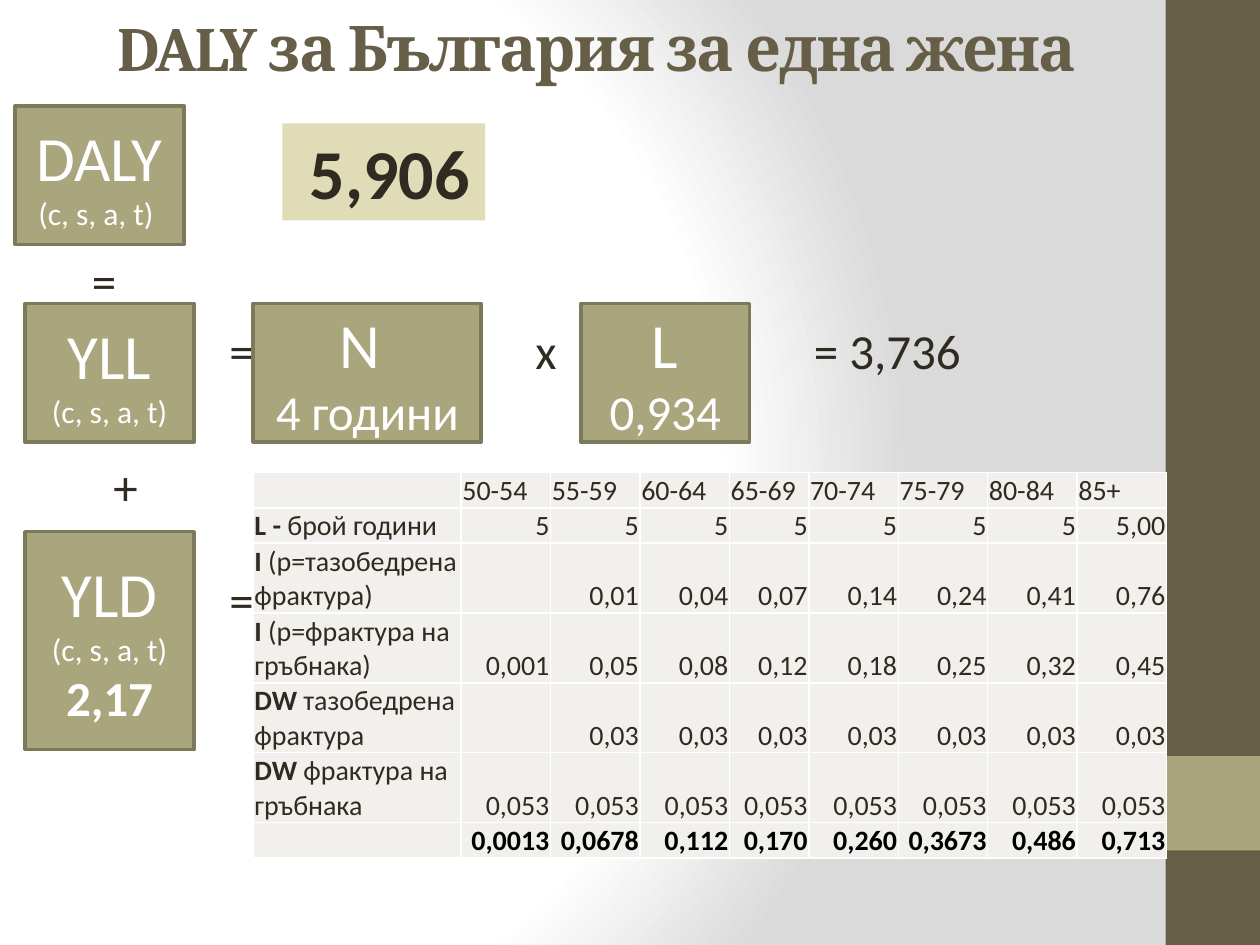
from lxml import etree
from pptx import Presentation
from pptx.dml.color import RGBColor
from pptx.enum.shapes import MSO_SHAPE
from pptx.enum.text import MSO_ANCHOR, PP_ALIGN
from pptx.oxml import parse_xml
from pptx.oxml.ns import nsdecls, qn
from pptx.util import Inches, Pt


class Theme:
    brown = RGBColor.from_string("675E47")
    olive = RGBColor.from_string("A9A57C")
    olive_edge = RGBColor.from_string("7D7A5C")
    sand = RGBColor.from_string("DFDCB7")
    cell = RGBColor.from_string("F1F0EC")
    ink = RGBColor.from_string("2F2B20")
    black = RGBColor.from_string("000000")
    white = RGBColor.from_string("FFFFFF")
    heading_font, body_font = "Cambria", "Calibri"
    huge, large, medium, small, tiny = 40, 36, 28, 18, 16


presentation = Presentation()
presentation.slide_width, presentation.slide_height = Inches(10), Inches(7.5)
COLUMN = presentation.slide_width / 100
ROW = presentation.slide_height / 75


def place(left, top, width, height):
    """Turn columns and rows of a 100 by 75 grid into slide lengths."""
    return [int(length) for length in
            (left * COLUMN, top * ROW, width * COLUMN, height * ROW)]


def write(paragraph, text, size, color=Theme.ink, font=Theme.body_font,
          bold=False, align=PP_ALIGN.LEFT):
    paragraph.alignment = align
    if not text:
        paragraph._p.get_or_add_endParaRPr().set("sz", str(size * 100))
        return None
    run = paragraph.add_run()
    run.text = text
    run.font.size, run.font.name, run.font.bold = Pt(size), font, bold
    run.font.color.rgb = color
    return run


slide = presentation.slides.add_slide(presentation.slide_layouts[5])

# Background: a radial fade from white to grey
slide.background.fill.solid()
properties = slide.element.cSld.find(qn("p:bg")).find(qn("p:bgPr"))
properties.replace(properties[0], parse_xml(
    f'<a:gradFill {nsdecls("a")} rotWithShape="1"><a:gsLst>'
    '<a:gs pos="0"><a:srgbClr val="FFFFFF"/></a:gs>'
    '<a:gs pos="75000"><a:srgbClr val="FFFFFF"/></a:gs>'
    '<a:gs pos="100000"><a:srgbClr val="DADADA"/></a:gs></a:gsLst>'
    '<a:path path="circle">'
    '<a:fillToRect l="20000" t="50000" r="100000" b="50000"/>'
    '</a:path></a:gradFill>'))

# Title
title = slide.shapes.title
title.left, title.top, title.width, title.height = place(2, 0.5, 90.7, 6.3)
title.text_frame.vertical_anchor = MSO_ANCHOR.MIDDLE
title_run = write(title.text_frame.paragraphs[0], "DALY за България за една жена",
                  Theme.large, color=Theme.brown, font=Theme.heading_font,
                  bold=True, align=PP_ALIGN.CENTER)
title_run.font._element.set("spc", "-100")

# Operators of the formula: left edge, middle line, text
operators = [
    (7.3, 22.2, "="),
    (18.2, 27.8, "="), (42.5, 27.8, "х"), (64.6, 27.8, "= 3,736"),
    (9, 38.6, "+"),
    (18.2, 47.5, "="),
]
for left, middle, text in operators:
    box = slide.shapes.add_textbox(*place(left, middle - 2.5, 3 * len(text), 5))
    frame = box.text_frame
    frame.word_wrap = True
    frame.vertical_anchor = MSO_ANCHOR.MIDDLE
    frame.margin_left = frame.margin_right = 0
    frame.margin_top = frame.margin_bottom = 0
    write(frame.paragraphs[0], text, Theme.medium)

# Filled boxes: place, fill, edge, lines of (text, size, bold)
arguments = "(c, s, a, t)"
boxes = [
    ((92.5, 0, 7.5, 75), Theme.brown, None, []),
    ((92.5, 60, 7.5, 7.5), Theme.olive, None, []),
    ((1.2, 8.4, 13.4, 11), Theme.olive, Theme.olive_edge,
     [("DALY", Theme.large, False), (arguments + " ", Theme.small, False)]),
    ((2, 42.2, 13.4, 17.3), Theme.olive, Theme.olive_edge,
     [("YLD", Theme.large, False), (arguments, Theme.small, False),
      ("2,17", Theme.medium, True)]),
    ((2, 24.1, 13.4, 11), Theme.olive, Theme.olive_edge,
     [("YLL", Theme.large, False), (arguments, Theme.small, False)]),
    ((20.1, 24.1, 18.1, 11), Theme.olive, Theme.olive_edge,
     [("N ", Theme.large, False), ("4 години", Theme.medium, False)]),
    ((46.1, 24.1, 13.4, 11), Theme.olive, Theme.olive_edge,
     [("L", Theme.large, False), ("0,934", Theme.medium, False)]),
    ((22.4, 9.8, 16.1, 7.7), Theme.sand, None, [("5,906", Theme.huge, True)]),
]
for area, fill, edge, lines in boxes:
    box = slide.shapes.add_shape(MSO_SHAPE.RECTANGLE, *place(*area))
    box.shadow.inherit = False
    box.fill.solid()
    box.fill.fore_color.rgb = fill
    if edge:
        box.line.color.rgb, box.line.width = edge, Pt(2)
    else:
        box.line.fill.background()
    frame = box.text_frame
    frame.word_wrap = True
    frame.vertical_anchor = MSO_ANCHOR.MIDDLE
    if fill == Theme.sand:
        frame.margin_left, frame.margin_right = int(2.2 * COLUMN), 0
    for index, (text, size, bold) in enumerate(lines):
        paragraph = frame.add_paragraph() if index else frame.paragraphs[0]
        write(paragraph, text, size, bold=bold,
              color=Theme.white if edge else Theme.ink,
              align=PP_ALIGN.CENTER if edge else PP_ALIGN.LEFT)

# Table: bold lead of the row label, rest of the label, values by age group
rows = [
    ("", "", ["50-54", "55-59", "60-64", "65-69", "70-74", "75-79", "80-84", "85+"]),
    ("L - ", "брой години", ["5"] * 7 + ["5,00"]),
    ("I ", "(р=тазобедрена фрактура)",
     ["", "0,01", "0,04", "0,07", "0,14", "0,24", "0,41", "0,76"]),
    ("I ", "(р=фрактура на гръбнака)",
     ["0,001", "0,05", "0,08", "0,12", "0,18", "0,25", "0,32", "0,45"]),
    ("DW ", "тазобедрена фрактура", [""] + ["0,03"] * 7),
    ("DW ", "фрактура на гръбнака", ["0,053"] * 8),
    ("", "", ["0,0013", "0,0678", "0,112", "0,170", "0,260", "0,3673", "0,486", "0,713"]),
]
column_widths = [16.5] + [7.1] * 3 + [6.3] + [7.1] * 4
row_heights = [2.8] * 2 + [5.55] * 4 + [2.8]
table = slide.shapes.add_table(
    len(rows), len(column_widths),
    *place(20.1, 37.5, sum(column_widths), sum(row_heights))).table
table.first_row = table.horz_banding = False
for column, width in zip(table.columns, column_widths):
    column.width = int(width * COLUMN)
for row, height in zip(table.rows, row_heights):
    row.height = int(height * ROW)

for row_index, (lead, label, values) in enumerate(rows):
    is_header, is_total = row_index == 0, row_index == len(rows) - 1
    for column_index, text in enumerate([label] + values):
        cell = table.cell(row_index, column_index)
        cell.vertical_anchor = MSO_ANCHOR.BOTTOM
        cell.margin_left = cell.margin_right = cell.margin_top = Inches(0.01)
        cell.margin_bottom = 0
        cell_properties = cell._tc.get_or_add_tcPr()
        for side in ("lnL", "lnR", "lnT", "lnB"):
            border = etree.SubElement(cell_properties, qn(f"a:{side}"), w=str(Pt(1)))
            solid = etree.SubElement(border, qn("a:solidFill"))
            etree.SubElement(solid, qn("a:srgbClr"), val=str(Theme.white))
        cell.fill.solid()
        cell.fill.fore_color.rgb = Theme.cell
        paragraph = cell.text_frame.paragraphs[0]
        if column_index == 0 and lead:
            write(paragraph, lead, Theme.tiny, bold=True)
        write(paragraph, text, Theme.tiny, bold=is_total,
              color=Theme.black if is_total else Theme.ink,
              align=PP_ALIGN.LEFT if is_header or column_index == 0 else PP_ALIGN.RIGHT)

presentation.save("out.pptx")
